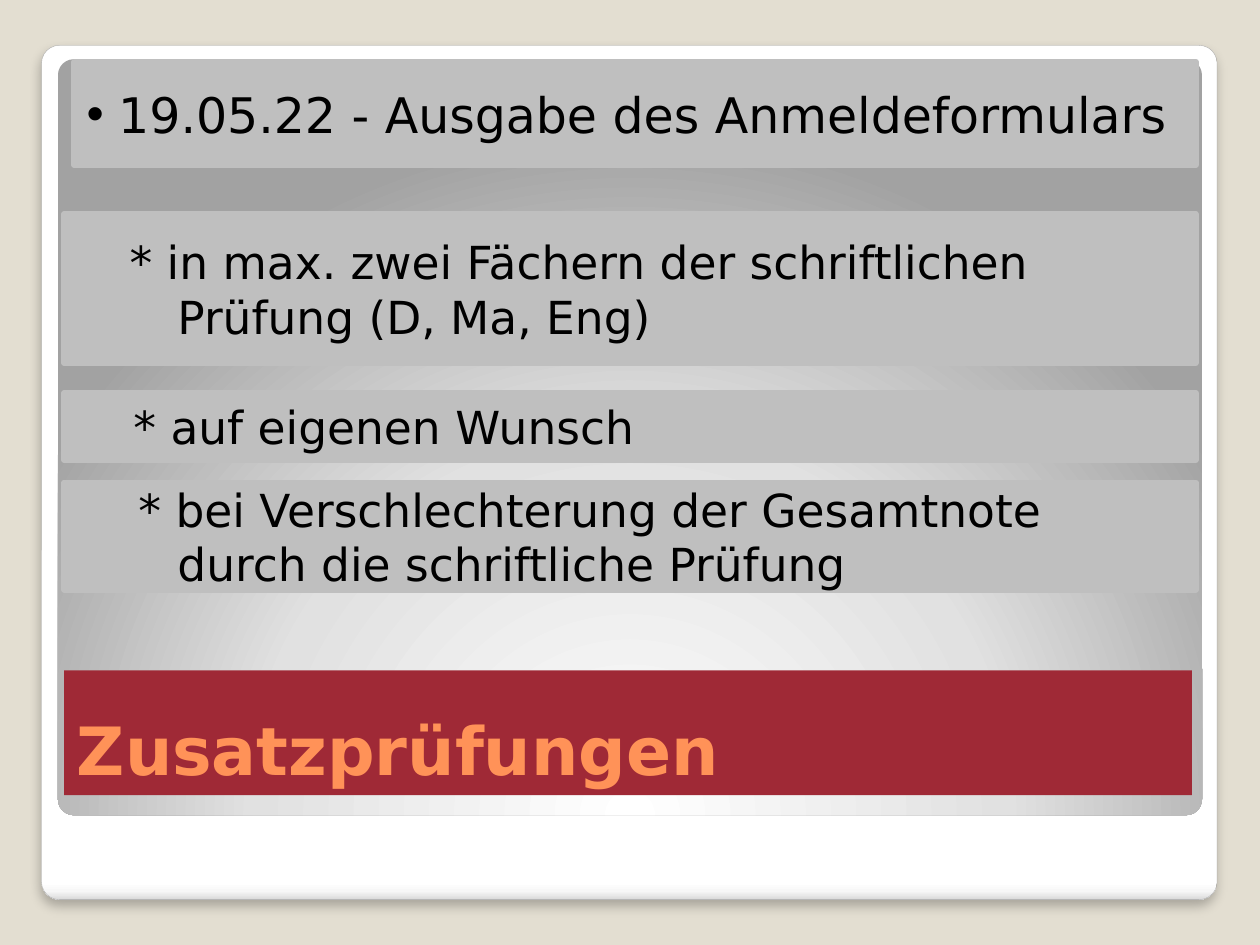
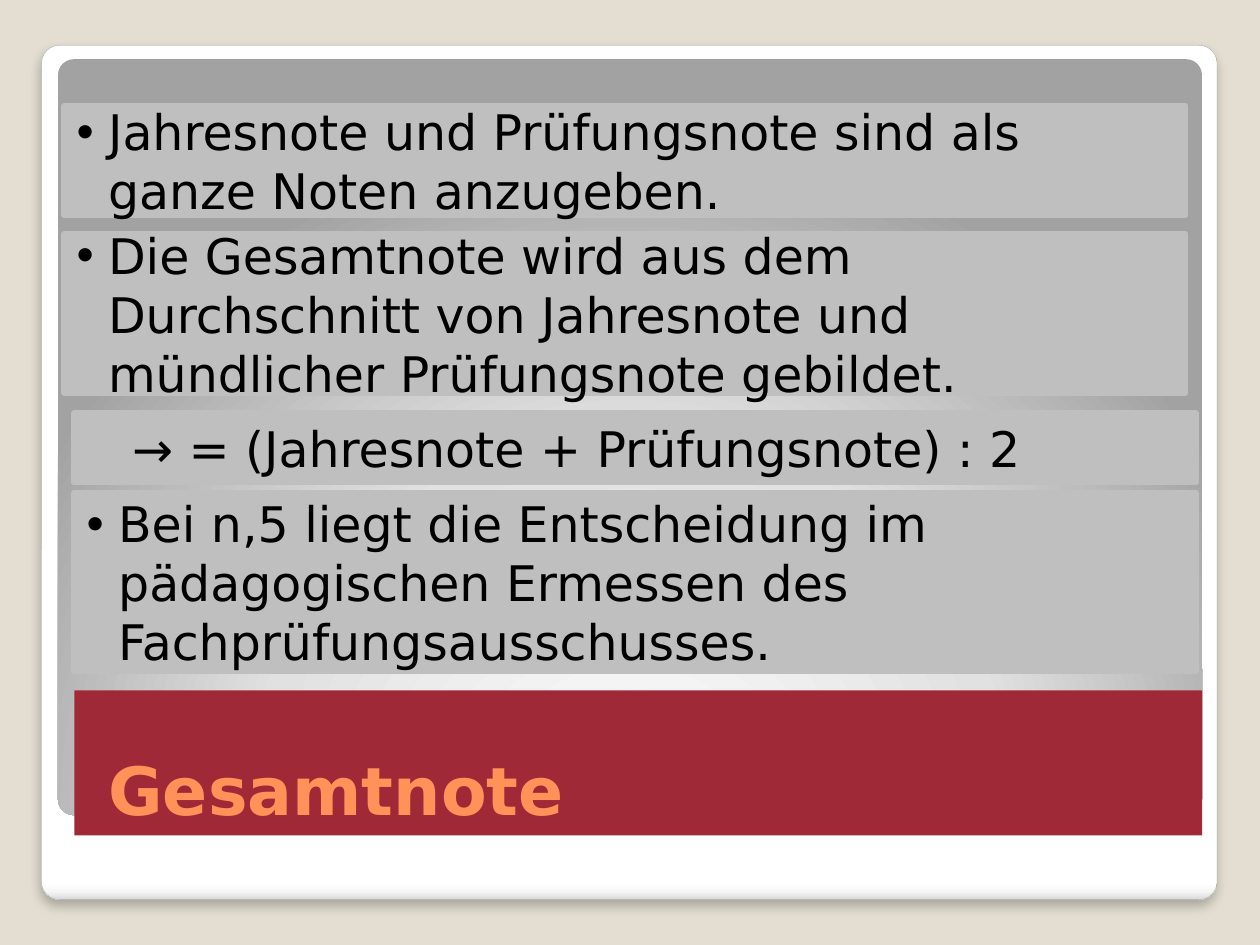
from lxml.etree import SubElement
from pptx import Presentation
from pptx.dml.color import RGBColor
from pptx.enum.shapes import MSO_SHAPE
from pptx.enum.text import MSO_ANCHOR, MSO_AUTO_SIZE, PP_ALIGN
from pptx.oxml.ns import qn
from pptx.util import Inches, Pt

COLORS = {
    "page": "E3DED1",
    "card_line": "A4A4A4",
    "title_band": "9F2936",
    "title_text": "FF9258",
    "band": "BFBFBF",
    "text": "000000",
    "shadow": "000000",
}
CARD_STOPS = [(0, "FFFFFF"), (98, "FFFFFF"), (99, "F7F7F7"), (100, "DADADA")]
PANEL_STOPS = [(0, "FFFFFF"), (55, "E1E1E1"), (100, "A2A2A2")]
FONT = "DejaVu Sans"

# Left margin and first-line indent of a paragraph, in inches
BULLET = (0.25, -0.25)
TWO_LINE_STAR = (0.8, -0.38)
ONE_LINE_STAR = (0.45, 0)
LAST_STAR = (0.8, -0.31)
FORMULA = (0.36, 0)

# Each band: left, top, width, height, text size, indents, lines
SLIDES = [
    {
        "title": "Zusatzprüfungen",
        "title_at": (0.51, 5.32, 8.95, 0.99),
        "title_margin": 0.1,
        "bands": [
            (0.59, 0.49, 8.9, 0.82, 28, BULLET,
             ["19.05.22 - Ausgabe des Anmeldeformulars"]),
            (0.51, 1.7, 8.98, 1.18, 26, TWO_LINE_STAR,
             ["* in max. zwei Fächern der schriftlichen", "Prüfung (D, Ma, Eng)"]),
            (0.51, 3.12, 8.98, 0.53, 26, ONE_LINE_STAR, ["* auf eigenen Wunsch"]),
            (0.51, 3.83, 8.98, 0.85, 26, LAST_STAR,
             ["* bei Verschlechterung der Gesamtnote",
              "durch die schriftliche Prüfung"]),
        ],
    },
    {
        "title": "Gesamtnote",
        "title_at": (0.59, 5.48, 8.95, 1.15),
        "title_margin": 0.27,
        "bands": [
            (0.51, 0.84, 8.9, 0.87, 28, BULLET,
             ["Jahresnote und Prüfungsnote sind als", "ganze Noten anzugeben."]),
            (0.51, 1.86, 8.9, 1.26, 28, BULLET,
             ["Die Gesamtnote wird aus dem", "Durchschnitt von Jahresnote und",
              "mündlicher Prüfungsnote gebildet."]),
            (0.59, 3.28, 8.9, 0.55, 28, FORMULA,
             ["→ = (Jahresnote + Prüfungsnote) : 2"]),
            (0.59, 3.91, 8.9, 1.42, 28, BULLET,
             ["Bei n,5 liegt die Entscheidung im", "pädagogischen Ermessen des",
              "Fachprüfungsausschusses."]),
        ],
    },
]


def rgb(name):
    return RGBColor.from_string(COLORS[name])


def apply_format(target, values):
    for name, value in values.items():
        setattr(target, name, value)


def place(shape, left, top, width, height):
    apply_format(shape, {"left": Inches(left), "top": Inches(top),
                         "width": Inches(width), "height": Inches(height)})


def fill_solid(shape, color):
    shape.fill.solid()
    shape.fill.fore_color.rgb = rgb(color)


def outline(shape, color, width):
    shape.line.color.rgb = rgb(color)
    shape.line.width = Pt(width)


def format_font(font, size, color, bold=False):
    apply_format(font, {"name": FONT, "size": Pt(size), "bold": bold})
    font.color.rgb = rgb(color)


def add_gradient(shape, stops):
    """Insert a gradient after the geometry and return it, still without direction."""
    gradient = SubElement(shape.element.spPr, qn("a:gradFill"), rotWithShape="1")
    shape.element.spPr.insert(2, gradient)
    stop_list = SubElement(gradient, qn("a:gsLst"))
    for position, color in stops:
        stop = SubElement(stop_list, qn("a:gs"), pos=str(position * 1000))
        SubElement(stop, qn("a:srgbClr"), val=color)
    return gradient


def add_rounded_frame(page, *position):
    frame = page.shapes.add_shape(MSO_SHAPE.ROUNDED_RECTANGLE, 0, 0, 0, 0)
    place(frame, *position)
    frame.adjustments[0] = 0.021
    frame.shadow.inherit = False
    return frame


def add_card(page):
    card = add_rounded_frame(page, 0.33, 0.36, 9.33, 6.78)
    outline(card, "card_line", 0.16)
    gradient = add_gradient(card, CARD_STOPS)
    SubElement(gradient, qn("a:lin"), ang="5400000", scaled="0")
    effects = card.element.spPr.find(qn("a:effectLst"))
    shadow = SubElement(effects, qn("a:outerShdw"), blurRad=str(Pt(6)),
                        dist=str(Pt(4)), dir="5400000", algn="t", rotWithShape="0")
    color = SubElement(shadow, qn("a:srgbClr"), val=COLORS["shadow"])
    SubElement(color, qn("a:alpha"), val="25000")
    return card


def add_panel(page):
    panel = add_rounded_frame(page, 0.46, 0.47, 9.08, 6)
    panel.line.fill.background()
    gradient = add_gradient(panel, PANEL_STOPS)
    circle = SubElement(gradient, qn("a:path"), path="circle")
    SubElement(circle, qn("a:fillToRect"), l="50000", t="175000", r="50000", b="-75000")
    return panel


def share_frames(page, layout):
    """Build the card and panel, then move them behind everything on the layout."""
    for index, frame in enumerate([add_card(page), add_panel(page)]):
        frame.element.nvSpPr.cNvPr.set("id", str(101 + index))
        layout.shapes.element.insert(2 + index, frame.element)


def format_title(page, text, position, margin):
    title = page.shapes.title
    place(title, *position)
    fill_solid(title, "title_band")
    box = title.text_frame
    apply_format(box, {"text": text, "margin_left": Inches(margin),
                       "vertical_anchor": MSO_ANCHOR.BOTTOM,
                       "auto_size": MSO_AUTO_SIZE.NONE, "word_wrap": True})
    para = box.paragraphs[0]
    para.alignment = PP_ALIGN.LEFT
    format_font(para.runs[0].font, 38, "title_text", bold=True)


def indent(para, indents):
    margin, first_line = indents
    properties = para._p.get_or_add_pPr()
    properties.set("marL", str(Inches(margin)))
    properties.set("indent", str(Inches(first_line)))
    if indents == BULLET:
        SubElement(properties, qn("a:buFont"), typeface="Arial")
        SubElement(properties, qn("a:buChar"), char="•")


def add_text_band(page, left, top, width, height, size, indents, lines):
    band = page.shapes.add_shape(MSO_SHAPE.RECTANGLE, 0, 0, 0, 0)
    place(band, left, top, width, height)
    band.shadow.inherit = False
    fill_solid(band, "band")
    outline(band, "band", 3.35)
    SubElement(band.line._get_or_add_ln(), qn("a:round"))
    box = band.text_frame
    apply_format(box, {"vertical_anchor": MSO_ANCHOR.MIDDLE, "word_wrap": True})
    para = box.paragraphs[0]
    para.alignment = PP_ALIGN.LEFT
    indent(para, indents)
    for number, line in enumerate(lines):
        if number:
            para.add_line_break()
        span = para.add_run()
        span.text = line
        format_font(span.font, size, "text")


def main():
    deck = Presentation()
    apply_format(deck, {"slide_width": Inches(10), "slide_height": Inches(7.5)})
    background = deck.slide_master.background.fill
    background.solid()
    background.fore_color.rgb = rgb("page")
    layout = deck.slide_layouts.get_by_name("Title Only")
    for number, content in enumerate(SLIDES):
        page = deck.slides.add_slide(layout)
        if number == 0:
            share_frames(page, layout)
        format_title(page, content["title"], content["title_at"], content["title_margin"])
        for band in content["bands"]:
            add_text_band(page, *band)
    deck.save("out.pptx")


if __name__ == "__main__":
    main()
